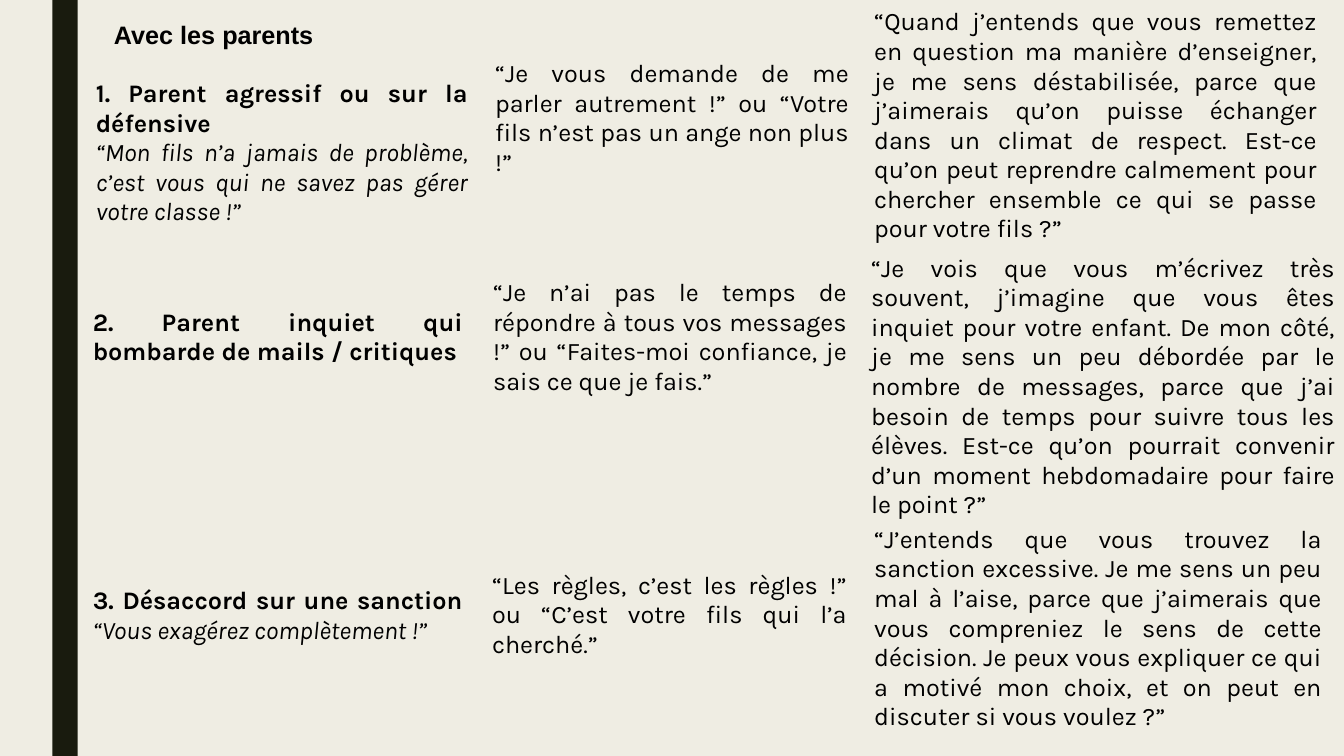
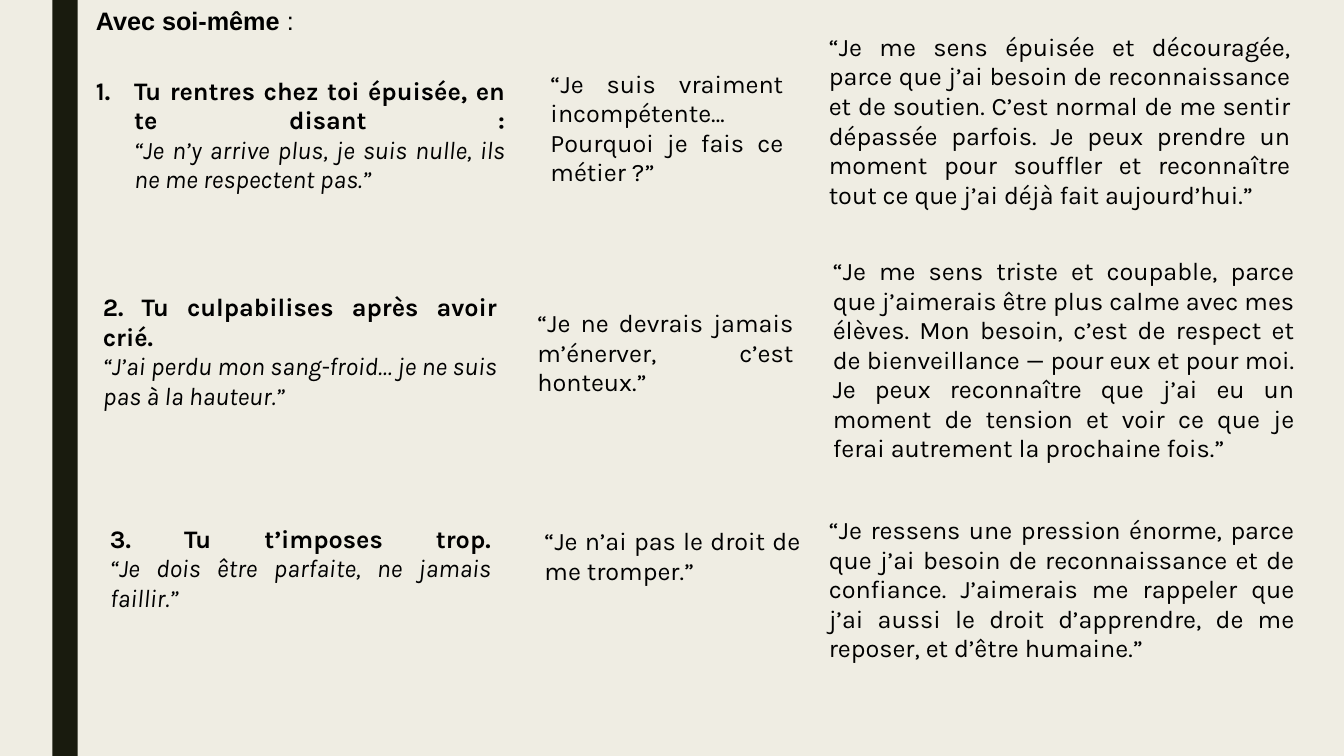
"""Build two slides of classroom phrases in three columns."""
from lxml import etree
from pptx import Presentation
from pptx.dml.color import RGBColor
from pptx.enum.shapes import MSO_SHAPE
from pptx.enum.text import MSO_ANCHOR, PP_ALIGN
from pptx.oxml.ns import qn
from pptx.util import Inches, Pt

RECT = MSO_SHAPE.RECTANGLE
MIDDLE, TOP = MSO_ANCHOR.MIDDLE, MSO_ANCHOR.TOP
LEFT, JUSTIFY = PP_ALIGN.LEFT, PP_ALIGN.JUSTIFY
PLAIN = "{2D5ABB26-0587-4C30-8999-92F81FD0307C}"

PARENTS = [
    ((0.85, 0.72, 3.89, 1.6), {
        "head": "1. Parent agressif ou sur la défensive",
        "note": "“Mon fils n’a jamais de problème, c’est vous qui ne savez "
                "pas gérer votre classe !”"}),
    ((4.81, 0.54, 3.71, 1.06), {
        "text": "“Je vous demande de me parler autrement !” ou “Votre fils "
                "n’est pas un ange non plus !”"}),
    ((8.57, 0, 4.59, 2.5), {
        "text": "“Quand j’entends que vous remettez en question ma manière "
                "d’enseigner, je me sens déstabilisée, parce que j’aimerais "
                "qu’on puisse échanger dans un climat de respect. Est-ce "
                "qu’on peut reprendre calmement pour chercher ensemble ce "
                "qui se passe pour votre fils ?”"}),
    ((0.82, 2.95, 3.87, 0.8), {
        "head": "2. Parent inquiet qui bombarde de mails / critiques"}),
    ((4.79, 2.65, 3.71, 1.4), {
        "text": "“Je n’ai pas le temps de répondre à tous vos messages !” ou "
                "“Faites-moi confiance, je sais ce que je fais.”"}),
    ((8.54, 2.47, 4.8, 2.5), {
        "text": "“Je vois que vous m’écrivez très souvent, j’imagine que vous "
                "êtes inquiet pour votre enfant. De mon côté, je me sens un "
                "peu débordée par le nombre de messages, parce que j’ai "
                "besoin de temps pour suivre tous les élèves. Est-ce qu’on "
                "pourrait convenir d’un moment hebdomadaire pour faire le "
                "point ?”"}),
    ((0.82, 5.71, 3.87, 0.8), {
        "head": "3. Désaccord sur une sanction",
        "note": "“Vous exagérez complètement !”"}),
    ((4.78, 5.49, 3.72, 1.23), {
        "text": "“Les règles, c’est les règles !” ou “C’est votre fils qui "
                "l’a cherché.”"}),
    ((8.57, 5.16, 4.64, 1.9), {
        "text": "“J’entends que vous trouvez la sanction excessive. Je me "
                "sens un peu mal à l’aise, parce que j’aimerais que vous "
                "compreniez le sens de cette décision. Je peux vous expliquer "
                "ce qui a motivé mon choix, et on peut en discuter si vous "
                "voulez ?”"}),
]

SELF = [
    ((0.85, 0.7, 4.26, 1.3), {
        "head": "Tu rentres chez toi épuisée, en te disant :",
        "note": "“Je n’y arrive plus, je suis nulle, ils ne me respectent "
                "pas.”",
        "listed": True}),
    ((5.36, 0.63, 2.51, 1.3), {
        "text": "“Je suis vraiment incompétente… Pourquoi je fais ce "
                "métier ?”"}),
    ((8.12, 0.26, 4.78, 1.9), {
        "text": "“Je me sens épuisée et découragée, parce que j’ai besoin de "
                "reconnaissance et de soutien. C’est normal de me sentir "
                "dépassée parfois. Je peux prendre un moment pour souffler et "
                "reconnaître tout ce que j’ai déjà fait aujourd’hui.”"}),
    ((0.92, 2.31, 4.11, 2.38), {
        "head": "2. Tu culpabilises après avoir crié.",
        "note": "“J’ai perdu mon sang-froid… je ne suis pas à la hauteur.”"}),
    ((5.23, 3.01, 2.74, 1), {
        "text": "“Je ne devrais jamais m’énerver, c’est honteux.”"}),
    ((8.16, 2.48, 4.78, 2.2), {
        "text": "“Je me sens triste et coupable, parce que j’aimerais être "
                "plus calme avec mes élèves. Mon besoin, c’est de respect et "
                "de bienveillance — pour eux et pour moi. Je peux reconnaître "
                "que j’ai eu un moment de tension et voir ce que je ferai "
                "autrement la prochaine fois.”"}),
    ((0.99, 4.82, 3.98, 1.66), {
        "head": "3. Tu t’imposes trop.",
        "note": "“Je dois être parfaite, ne jamais faillir.”"}),
    ((5.3, 4.79, 2.74, 1.47), {
        "text": "“Je n’ai pas le droit de me tromper.”"}),
    ((8.12, 5.01, 4.82, 1.69), {
        "text": "“Je ressens une pression énorme, parce que j’ai besoin de "
                "reconnaissance et de confiance. J’aimerais me rappeler que "
                "j’ai aussi le droit d’apprendre, de me reposer, et d’être "
                "humaine.”"}),
]


def paint(fill, code):
    """Give a fill one solid colour."""
    fill.solid()
    fill.fore_color.rgb = RGBColor.from_string(code)


class Deck:
    """Hold the style and the current slide."""

    paper, band, ink = "EFEDE3", "191B0E", "000000"
    size = Pt(18)

    def __init__(self):
        """Start a wide deck with a plain ground."""
        self.prs = Presentation()
        self.prs.slide_width = Inches(13.33)
        self.prs.slide_height = Inches(7.5)
        self.slide = None
        paint(self.prs.slide_master.background.fill, self.paper)

    def page(self, title, tail, box):
        """Add a slide with its title."""
        self.slide = self.prs.slides.add_slide(self.prs.slide_layouts[5])
        shape = self.slide.shapes.title
        shape.left, shape.top, shape.width, shape.height = map(Inches, box)
        frame = shape.text_frame
        frame.word_wrap = True
        frame.vertical_anchor = TOP
        para = frame.paragraphs[0]
        self.style(para, "Arial", LEFT)
        self.run(para, title, bold=True)
        if tail:
            self.run(para, tail, bold=False)

    def edge(self):
        """Put the dark side band on the master."""
        bar = self.slide.shapes.add_shape(
            RECT, Inches(0.52), 0, Inches(0.25), self.prs.slide_height)
        bar.shadow.inherit = False
        paint(bar.fill, self.band)
        bar.line.fill.background()
        self.prs.slide_master.shapes.element.append(bar.element)

    def style(self, para, face, align):
        """Set font and alignment of a paragraph."""
        para.alignment = align
        para.font.name = face
        para.font.size = self.size
        paint(para.font.fill, self.ink)

    def run(self, para, text, bold=None, slant=None):
        """Add a run of text."""
        run = para.add_run()
        run.text = text
        run.font.bold = bold
        run.font.italic = slant

    def card(self, box, text="", head="", note="", listed=False):
        """Add a table of one cell."""
        frame = self.slide.shapes.add_table(1, 1, *map(Inches, box))
        table = frame.table
        table.first_row = table.horz_banding = False
        for mark in frame.element.iter(qn("a:tableStyleId")):
            mark.text = PLAIN
        cell = table.cell(0, 0)
        cell.fill.background()
        cell.vertical_anchor = MIDDLE
        para = cell.text_frame.paragraphs[0]
        if listed:
            self.number(para)
        self.style(para, "Karla", JUSTIFY)
        if head:
            self.run(para, head, bold=True)
        if note:
            para.add_line_break()
            self.run(para, note, slant=True)
        if text:
            self.run(para, text)

    def number(self, para):
        """Number a paragraph with a hanging indent."""
        props = para._p.get_or_add_pPr()
        props.set("marL", str(Inches(0.38)))
        props.set("indent", str(-Inches(0.38)))
        mark = etree.SubElement(props, qn("a:buFont"))
        mark.set("typeface", "+mj-lt")
        mark = etree.SubElement(props, qn("a:buAutoNum"))
        mark.set("type", "arabicPeriod")


def main():
    """Build and save the deck."""
    deck = Deck()
    pages = [
        ("Avec les parents", "", (1.03, 0.14, 12.19, 0.4), PARENTS),
        ("Avec soi-même", " :", (0.85, 0, 12.33, 0.4), SELF),
    ]
    for title, tail, box, cards in pages:
        deck.page(title, tail, box)
        for place, words in cards:
            deck.card(place, **words)
    deck.edge()
    deck.prs.save("out.pptx")


if __name__ == "__main__":
    main()
